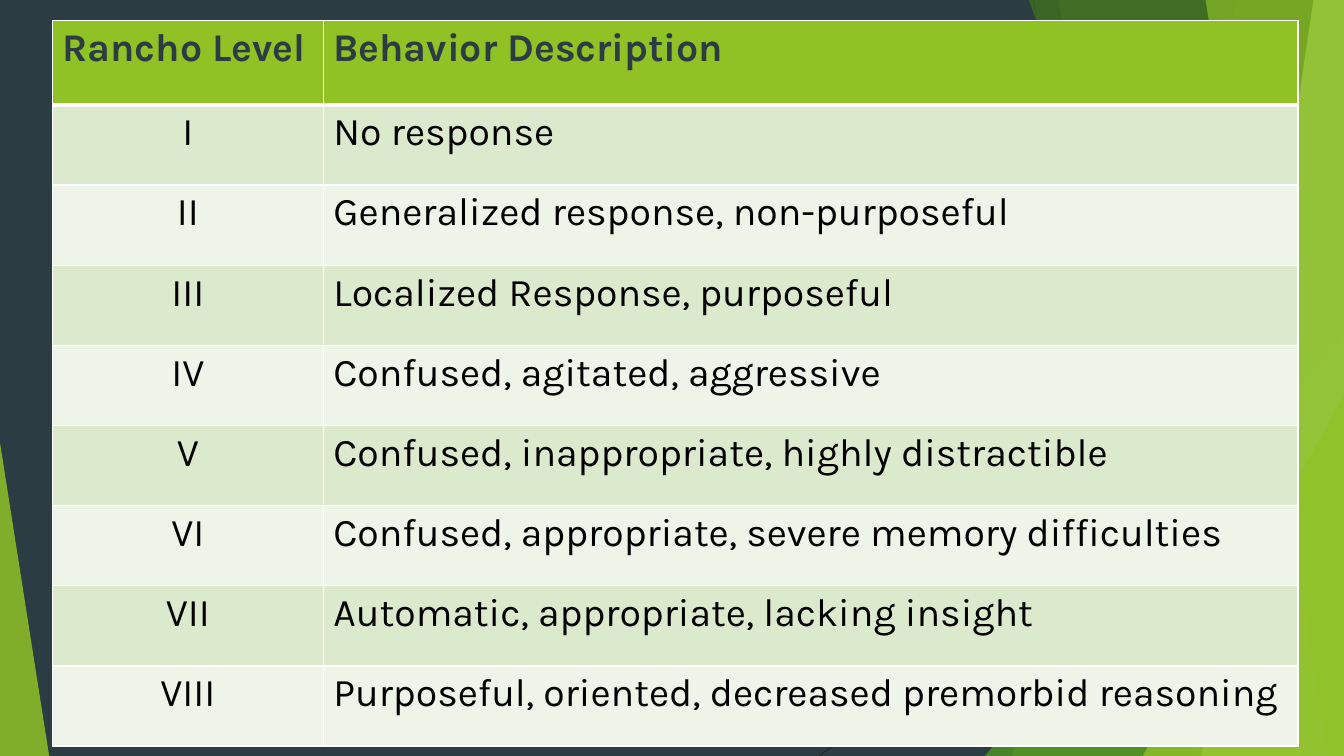
from lxml.etree import SubElement
from pptx import Presentation
from pptx.dml.color import RGBColor
from pptx.enum.shapes import MSO_CONNECTOR, MSO_SHAPE
from pptx.enum.text import PP_ALIGN
from pptx.oxml.ns import qn
from pptx.util import Cm, Pt

COLORS = {
    "slate": "2C3C43", "line": "262626", "lime": "90C226", "green": "54A021",
    "forest": "3F7819", "pale": "C0E474", "band": "DBE9CD", "light": "EEF4E8",
    "white": "FFFFFF", "black": "000000",
}
WIDTH, HEIGHT = 33.87, 19.05


def rgb(name):
    return RGBColor.from_string(COLORS[name])


def paint(sp, color, opacity):
    """Fill a shape with a see-through colour, without outline or shadow."""
    sp.shadow.inherit = False
    sp.line.fill.background()
    sp.fill.solid()
    sp.fill.fore_color.rgb = rgb(color)
    clr = sp.fill._xPr.find(qn("a:solidFill"))[0]
    SubElement(clr, qn("a:alpha"), val=str(opacity * 1000))


prs = Presentation()
prs.slide_width, prs.slide_height = Cm(WIDTH), Cm(HEIGHT)
s = prs.slides.add_slide(prs.slide_layouts[6])
s.background.fill.solid()
s.background.fill.fore_color.rgb = rgb("slate")

# Thin crossing lines
for ends in [(26.04, 0, 29.41, HEIGHT), (WIDTH, 10.24, 20.62, HEIGHT)]:
    line = s.shapes.add_connector(MSO_CONNECTOR.STRAIGHT, *map(Cm, ends))
    line.line.color.rgb = rgb("line")
    line.line.width = Pt(0.75)
    SubElement(line._element.spPr, qn("a:effectLst"))

# Facets, back to front: a band has its left edge's top and bottom x,
# a triangle has left, top, width, height and the place of its tip
facets = [
    ("lime", 30, (31.19, 25.5)),
    ("lime", 20, (26.67, 30.05)),
    ("green", 72, (24.82, 8.46, 9.05, 10.59, 1)),
    ("forest", 70, (25.93, 32.79)),
    ("pale", 70, (33.1, 30.28)),
    ("lime", 65, (30.38, 33.48)),
    ("lime", 80, (28.8, 9.98, 5.07, 9.07, 1)),
    ("lime", 85, (0, 11.15, 1.24, 7.9, 0)),
]
for color, opacity, geometry in facets:
    if len(geometry) == 2:
        top, bottom = geometry
        outline = s.shapes.build_freeform(Cm(top), 0)
        corners = [(WIDTH, 0), (WIDTH, HEIGHT), (bottom, HEIGHT)]
        outline.add_line_segments([(Cm(x), Cm(y)) for x, y in corners])
        sp = outline.convert_to_shape()
    else:
        *box, tip = geometry
        sp = s.shapes.add_shape(MSO_SHAPE.ISOSCELES_TRIANGLE, *map(Cm, box))
        sp.adjustments[0] = tip
    paint(sp, color, opacity)

# Table of levels
rows = [
    ("Rancho Level", "Behavior Description"),
    ("I", "No response"),
    ("II", "Generalized response, non-purposeful"),
    ("III", "Localized Response, purposeful"),
    ("IV", "Confused, agitated, aggressive"),
    ("V", "Confused, inappropriate, highly distractible"),
    ("VI", "Confused, appropriate, severe memory difficulties"),
    ("VII", "Automatic, appropriate, lacking insight"),
    ("VIII", "Purposeful, oriented, decreased premorbid reasoning"),
]
HEADER_H, ROW_H = 2.13, 2.02
col_widths = (6.83, 24.56)
table = s.shapes.add_table(
    len(rows), 2, Cm(1.32), Cm(0.51), Cm(sum(col_widths)),
    Cm(HEADER_H + ROW_H * (len(rows) - 1))).table
for column, width in zip(table.columns, col_widths):
    column.width = Cm(width)

for i, texts in enumerate(rows):
    header = i == 0
    table.rows[i].height = Cm(HEADER_H if header else ROW_H)
    fill = "lime" if header else ("band" if i % 2 else "light")
    for j, text in enumerate(texts):
        cell = table.cell(i, j)
        cell.text_frame.text = text
        p = cell.text_frame.paragraphs[0]
        if j == 0 and not header:
            p.alignment = PP_ALIGN.CENTER
        font = p.runs[0].font
        font.name, font.size, font.bold = "Karla", Pt(28), header
        font.color.rgb = rgb("slate" if header else "black")

        tcPr = cell._tc.get_or_add_tcPr()
        for side in ("L", "R", "T", "B"):
            thick = (i, side) in [(0, "B"), (1, "T")]
            ln = SubElement(tcPr, qn(f"a:ln{side}"), w=str(Pt(3 if thick else 1)))
            solid = SubElement(ln, qn("a:solidFill"))
            SubElement(solid, qn("a:srgbClr"), val=COLORS["white"])
        cell.fill.solid()
        cell.fill.fore_color.rgb = rgb(fill)

prs.save("out.pptx")
